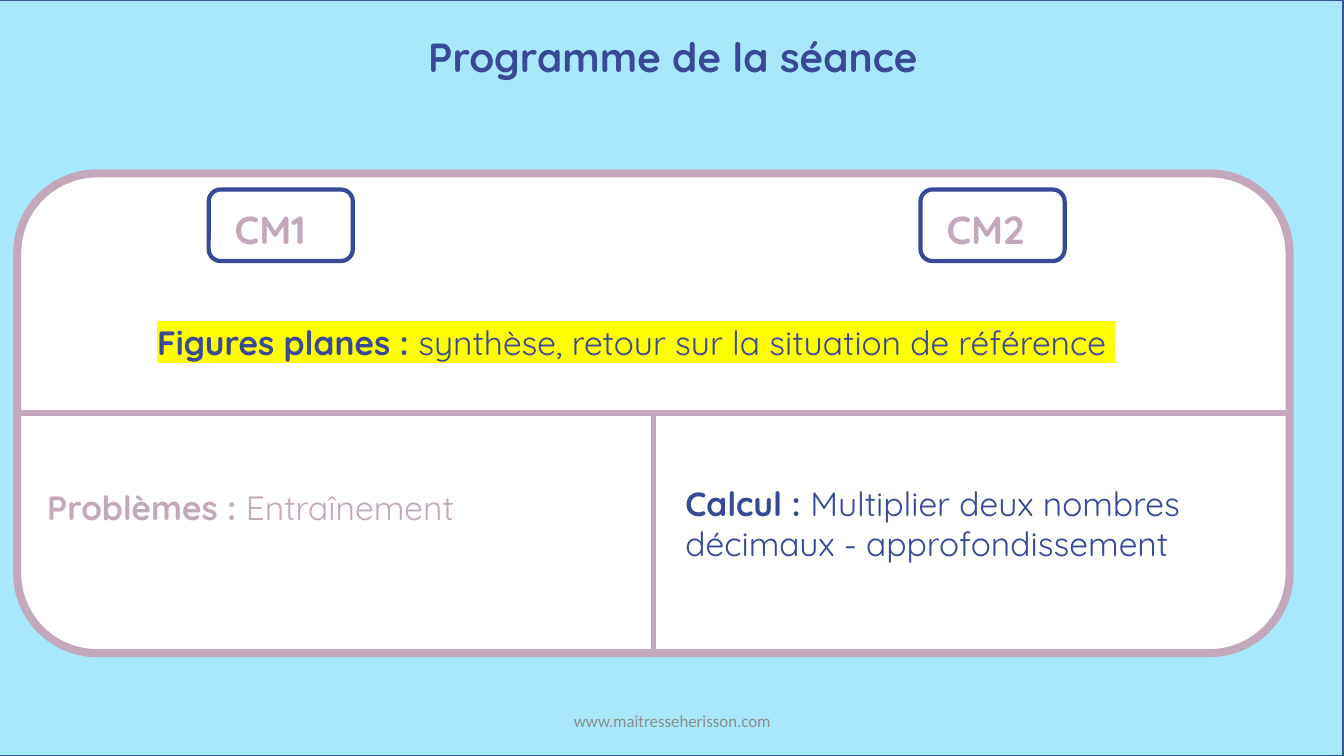
import dataclasses
import typing

import lxml.etree
import pptx
import pptx.dml.color
import pptx.enum.shapes
import pptx.enum.text
import pptx.oxml.ns
import pptx.util

PX = 9144
NAVY = "374997"
MAUVE = "C3A7BA"
WHITE = "FFFFFF"
KIND = pptx.enum.shapes.MSO_SHAPE
ALIGN = pptx.enum.text.PP_ALIGN
ANCHOR = pptx.enum.text.MSO_ANCHOR
AUTO = pptx.enum.text.MSO_AUTO_SIZE


@dataclasses.dataclass
class Box:
    left: int
    top: int
    width: int
    height: int

    def emu(self) -> list[int]:
        return [n * PX for n in dataclasses.astuple(self)]


@dataclasses.dataclass
class Run:
    text: str
    bold: bool = False


@dataclasses.dataclass
class Label:
    box: Box
    runs: list[Run]
    color: str
    size: int = 24
    font: str = "Quicksand"
    align: typing.Any = ALIGN.LEFT
    anchor: typing.Any = ANCHOR.TOP
    mark: str = ""
    grow: bool = True


@dataclasses.dataclass
class Badge:
    left: int
    text: str


def rgb(code: str) -> pptx.dml.color.RGBColor:
    return pptx.dml.color.RGBColor.from_string(code)


def draw_shape(shapes, kind, box: Box, fill: str, line: str, width: float):
    shape = shapes.add_shape(kind, *box.emu())
    shape.shadow.inherit = False
    shape.fill.solid()
    shape.fill.fore_color.rgb = rgb(fill)
    shape.line.color.rgb = rgb(line)
    shape.line.width = pptx.util.Pt(width)
    return shape


def draw_line(shapes, start: tuple[int, int], end: tuple[int, int]):
    line = shapes.add_connector(
        pptx.enum.shapes.MSO_CONNECTOR.STRAIGHT, *[n * PX for n in start + end])
    line.line.color.rgb = rgb(MAUVE)
    line.line.width = pptx.util.Pt(4)
    lxml.etree.SubElement(line.element.spPr, pptx.oxml.ns.qn("a:effectLst"))
    return line


def mark_run(run, code: str) -> None:
    mark = lxml.etree.Element(pptx.oxml.ns.qn("a:highlight"))
    lxml.etree.SubElement(mark, pptx.oxml.ns.qn("a:srgbClr"), val=code)
    run.font.fill._xPr.find(pptx.oxml.ns.qn("a:solidFill")).addnext(mark)


def fill_text(shape, label: Label) -> None:
    shape.left, shape.top, shape.width, shape.height = label.box.emu()
    frame = shape.text_frame
    frame.word_wrap = True
    frame.auto_size = AUTO.SHAPE_TO_FIT_TEXT if label.grow else AUTO.NONE
    frame.vertical_anchor = label.anchor
    para = frame.paragraphs[0]
    para.alignment = label.align
    for part in label.runs:
        run = para.add_run()
        run.text = part.text
        run.font.name = label.font
        run.font.size = pptx.util.Pt(label.size)
        run.font.bold = part.bold
        run.font.color.rgb = rgb(label.color)
        if label.mark:
            mark_run(run, label.mark)


def draw_label(shapes, label: Label) -> None:
    fill_text(shapes.add_textbox(*label.box.emu()), label)


def draw_badge(shapes, badge: Badge) -> None:
    group = shapes.add_group_shape()
    draw_shape(group.shapes, KIND.ROUNDED_RECTANGLE,
               Box(badge.left, 188, 143, 71), WHITE, NAVY, 3)
    draw_label(group.shapes, Label(Box(badge.left + 16, 199, 110, 57),
                                   [Run(badge.text, True)], MAUVE, 28))


TITLE = Label(Box(1, 27, 1333, 59), [Run("Programme de la séance", True)],
              NAVY, 29, align=ALIGN.CENTER)
BADGES = [Badge(207, "CM1"), Badge(913, "CM2")]
LABELS = [
    Label(Box(146, 314, 992, 50),
          [Run("Figures planes : ", True),
           Run("synthèse, retour sur la situation de référence ")],
          NAVY, mark="FFFF00"),
    Label(Box(37, 478, 604, 50),
          [Run("Problèmes : ", True), Run("Entraînement")], MAUVE),
    Label(Box(670, 474, 574, 91),
          [Run("Calcul : ", True),
           Run("Multiplier deux nombres décimaux - approfondissement")], NAVY),
    Label(Box(442, 695, 450, 40), [Run("www.maitresseherisson.com")],
          "8C8C8C", 12, "Calibri", ALIGN.CENTER, ANCHOR.MIDDLE, grow=False),
]


def main() -> None:
    deck = pptx.Presentation()
    deck.slide_width, deck.slide_height = 1333 * PX, 750 * PX
    slide = deck.slides.add_slide(deck.slide_layouts[5])
    shapes = slide.shapes
    draw_shape(shapes, KIND.RECTANGLE, Box(-1, 0, 1333, 750),
               "A7E8FB", "325491", 1)
    panel = draw_shape(shapes, KIND.ROUNDED_RECTANGLE,
                       Box(17, 172, 1262, 476), WHITE, MAUVE, 5.75)
    title = shapes.title
    panel.element.addnext(title.element)
    fill_text(title, TITLE)
    for badge in BADGES:
        draw_badge(shapes, badge)
    split = draw_line(shapes, (648, 407), (648, 648))
    split.end_connect(panel, 2)
    cross = draw_line(shapes, (17, 410), (1279, 410))
    cross.begin_connect(panel, 1)
    cross.end_connect(panel, 3)
    for label in LABELS:
        draw_label(shapes, label)
    deck.save("out.pptx")


if __name__ == "__main__":
    main()
